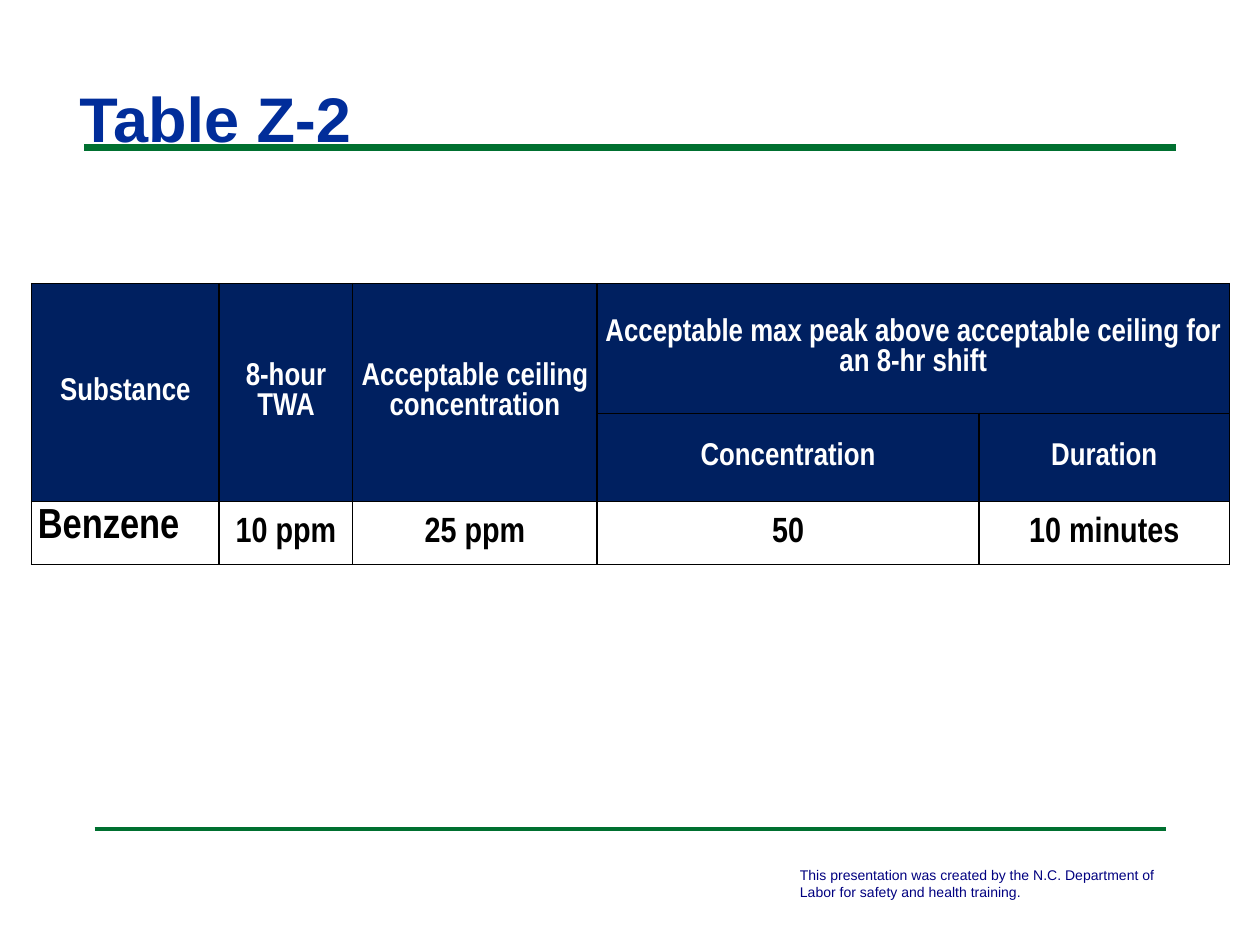
import pptx
import pptx.util
import pptx.dml.color
import pptx.enum.shapes
import pptx.enum.text
import pptx.oxml
import pptx.oxml.ns
from dataclasses import dataclass

Inches, Pt = pptx.util.Inches, pptx.util.Pt
Color = pptx.dml.color.RGBColor.from_string
Align = pptx.enum.text.PP_ALIGN
Anchor = pptx.enum.text.MSO_ANCHOR


@dataclass(frozen=True)
class Theme:
    title: str = "012D9A"
    rule: str = "007030"
    note: str = "000080"
    head: str = "002060"
    light: str = "FFFFFF"
    dark: str = "000000"
    sans: str = "Arial"
    narrow: str = "Arial Narrow"
    title_size: int = 36
    head_size: int = 18
    name_size: int = 24
    value_size: int = 20
    note_size: int = 8


theme = Theme()


def style(para, face, size, color, bold=False):
    font = para.font
    font.name, font.size, font.bold = face, Pt(size), bold
    font.color.rgb = Color(color)


def border(cell):
    """Draw a thin dark line on all four sides of a cell."""
    props = cell._tc.get_or_add_tcPr()
    for i, side in enumerate(("lnL", "lnR", "lnT", "lnB")):
        props.insert(i, pptx.oxml.parse_xml(
            f'<a:{side} {pptx.oxml.ns.nsdecls("a")} w="{Pt(1)}"><a:solidFill>'
            f'<a:srgbClr val="{theme.dark}"/></a:solidFill></a:{side}>'))


deck = pptx.Presentation()
deck.slide_width, deck.slide_height = Inches(10), Inches(7.5)
slide = deck.slides.add_slide(deck.slide_layouts[5])

# Rules below the title and above the footer
for left, top, width in ((0.67, 1.17, 4), (0.75, 6.58, 2)):
    rule = slide.shapes.add_connector(
        pptx.enum.shapes.MSO_CONNECTOR.STRAIGHT,
        Inches(left), Inches(top), Inches(10 - left), Inches(top))
    rule.line.color.rgb = Color(theme.rule)
    rule.line.width = Pt(width)
    rule._element.spPr.append(pptx.oxml.parse_xml(
        f'<a:effectLst {pptx.oxml.ns.nsdecls("a")}/>'))

# Footer
note = slide.shapes.add_textbox(
    Inches(6.25), Inches(6.83), Inches(3.25), Inches(0.37)).text_frame
note.word_wrap = True
note.text = ("This presentation was created by the N.C. Department of Labor "
             "for safety and health training.")
style(note.paragraphs[0], theme.sans, theme.note_size, theme.note)

# Title
title = slide.shapes.title
title.left, title.top = Inches(0.58), Inches(0.28)
title.width, title.height = Inches(8.58), Inches(1.72)
frame = title.text_frame
frame.text = "Table Z-2"
frame.auto_size = pptx.enum.text.MSO_AUTO_SIZE.NONE
frame.vertical_anchor = Anchor.TOP
frame.margin_left = frame.margin_right = Inches(0.05)
frame.margin_top, frame.margin_bottom = Inches(0.35), 0
frame.paragraphs[0].alignment = Align.LEFT
style(frame.paragraphs[0], theme.sans, theme.title_size, theme.title, True)

# Exposure limits
widths = (1.49, 1.06, 1.94, 3.03, 1.99)
heights = (1.03, 0.7, 0.5)
rows = (
    ("Substance", "8-hour TWA", "Acceptable ceiling concentration",
     "Acceptable max peak above acceptable ceiling for an 8-hr shift", ""),
    ("", "", "", "Concentration", "Duration"),
    ("Benzene", "10 ppm", "25 ppm", "50", "10 minutes"),
)
table = slide.shapes.add_table(
    len(rows), len(widths), Inches(0.25), Inches(2.25),
    Inches(sum(widths)), Inches(sum(heights))).table
for col, width in zip(table.columns, widths):
    col.width = Inches(width)
for row, height in zip(table.rows, heights):
    row.height = Inches(height)
for c in range(3):
    table.cell(0, c).merge(table.cell(1, c))
table.cell(0, 3).merge(table.cell(0, 4))

for r, texts in enumerate(rows):
    head = r < 2
    for c, text in enumerate(texts):
        cell = table.cell(r, c)
        cell.fill.solid()
        cell.fill.fore_color.rgb = Color(theme.head if head else theme.light)
        border(cell)
        if not text:
            continue
        name = not head and c == 0
        cell.margin_left = cell.margin_right = Inches(0.05)
        cell.margin_top = cell.margin_bottom = Inches(0.05)
        cell.vertical_anchor = Anchor.TOP if name else Anchor.MIDDLE
        cell.text = text
        para = cell.text_frame.paragraphs[0]
        para.alignment = Align.LEFT if name else Align.CENTER
        size = (theme.head_size if head else
                theme.name_size if name else theme.value_size)
        style(para, theme.narrow, size,
              theme.light if head else theme.dark, True)

deck.save("out.pptx")
